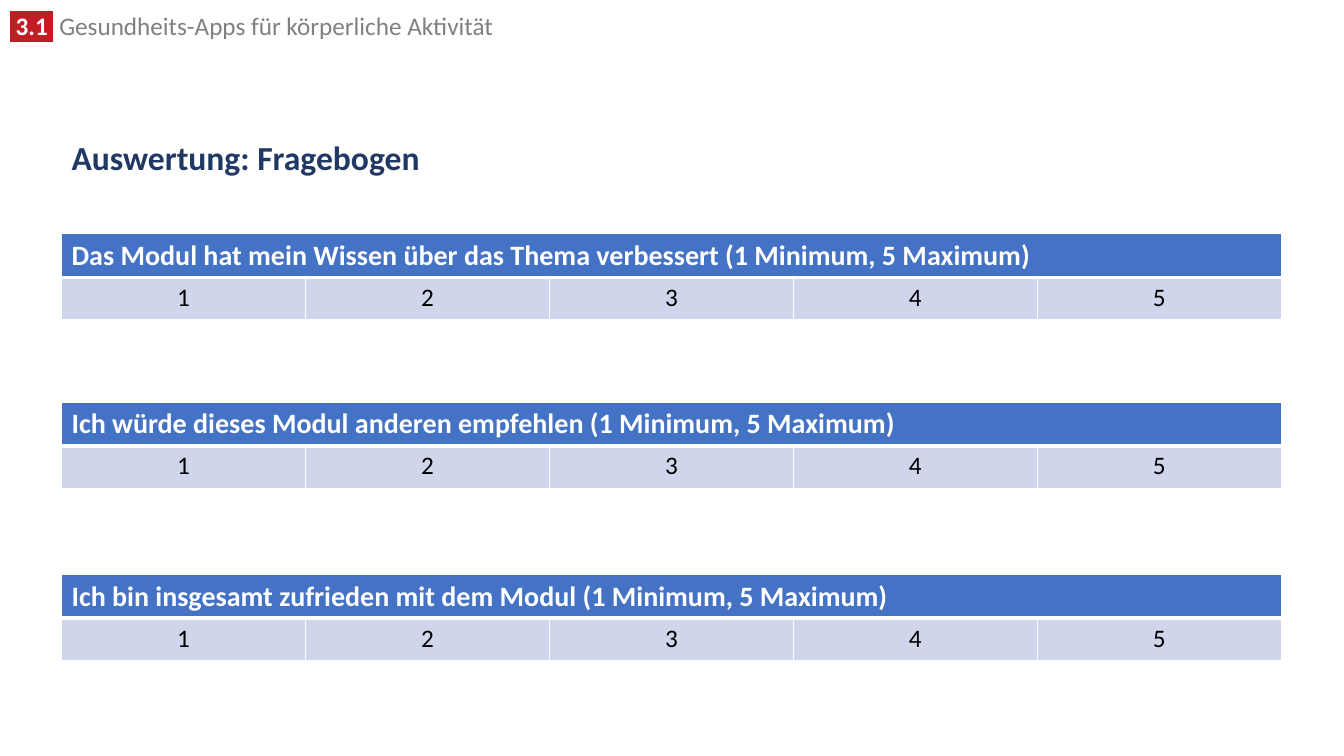
"""Build the questionnaire slide with three rating tables."""
import dataclasses

import lxml.etree
import pptx
import pptx.dml.color
import pptx.enum.text
import pptx.oxml.ns
import pptx.util

PX = 9144
LEFT, WIDE = 61, 1210
ROW = 42
SCORES = range(1, 6)
ALIGN = pptx.enum.text.PP_ALIGN
RATINGS = (
    (232, "Das Modul hat mein Wissen über das Thema verbessert (1 Minimum, 5 Maximum)"),
    (399, "Ich würde dieses Modul anderen empfehlen (1 Minimum, 5 Maximum)"),
    (570, "Ich bin insgesamt zufrieden mit dem Modul (1 Minimum, 5 Maximum)"),
)


@dataclasses.dataclass(frozen=True)
class Theme:
    """Hold the colours, font and type sizes."""
    font: str = "Calibri"
    white: str = "FFFFFF"
    black: str = "000000"
    red: str = "C01E24"
    grey: str = "808080"
    navy: str = "203864"
    blue: str = "4472C4"
    pale: str = "CFD5EA"
    title: int = 24
    query: int = 20
    small: int = 18


THEME = Theme()


def box(*sizes):
    """Turn pixel lengths into EMU."""
    return [pptx.util.Emu(size * PX) for size in sizes]


def style(font, size, color, bold=False):
    """Set face, size, colour and weight of a font."""
    font.name = THEME.font
    font.size = pptx.util.Pt(size)
    font.bold = bold
    font.color.rgb = pptx.dml.color.RGBColor.from_string(color)


def node(parent, tag, **attrs):
    """Append a DrawingML element and return it."""
    return lxml.etree.SubElement(parent, pptx.oxml.ns.qn(tag), attrs)


def mark(run, color):
    """Highlight a run."""
    light = node(run.font._element, "a:highlight")
    node(light, "a:srgbClr", val=color)
    run.font._element.find(pptx.oxml.ns.qn("a:solidFill")).addnext(light)


def add_header(slide):
    """Add the chapter number and its name."""
    frame = slide.shapes.add_textbox(*box(0, 11, 952, 35)).text_frame
    frame.word_wrap = True
    para = frame.paragraphs[0]
    para.line_spacing = 0.8
    number, name = para.add_run(), para.add_run()
    number.text = " 3.1 "
    style(number.font, THEME.small, THEME.white, True)
    mark(number, THEME.red)
    name.text = " Gesundheits-Apps für körperliche Aktivität"
    style(name.font, THEME.small, THEME.grey)


def add_title(slide, text):
    """Place and fill the title."""
    title = slide.shapes.title
    title.left, title.top, title.width, title.height = box(LEFT, 118, WIDE, 80)
    title.text_frame.text = text
    para = title.text_frame.paragraphs[0]
    para.alignment = ALIGN.LEFT
    para.line_spacing = 0.9
    style(para.font, THEME.title, THEME.navy, True)


def add_edges(cell, bottom):
    """Draw white borders around a cell."""
    props = cell._tc.get_or_add_tcPr()
    for side, width in (("L", 1), ("R", 1), ("T", 1), ("B", bottom)):
        line = node(props, f"a:ln{side}", w=str(pptx.util.Pt(width)))
        node(node(line, "a:solidFill"), "a:srgbClr", val=THEME.white)


def paint(cell, color, bottom=1):
    """Give a cell its borders and fill."""
    add_edges(cell, bottom)
    cell.fill.solid()
    cell.fill.fore_color.rgb = pptx.dml.color.RGBColor.from_string(color)


def add_rating(slide, top, query):
    """Add a question above its row of scores."""
    table = slide.shapes.add_table(
        2, len(SCORES), *box(LEFT, top, WIDE, 2 * ROW)).table
    table.horz_banding = False
    head = table.cell(0, 0)
    head.merge(table.cell(0, len(SCORES) - 1))
    for cell in table.rows[0].cells:
        paint(cell, THEME.blue, 3)
    head.text = query
    style(head.text_frame.paragraphs[0].font, THEME.query, THEME.white, True)
    for score, cell in zip(SCORES, table.rows[1].cells):
        paint(cell, THEME.pale)
        cell.text = str(score)
        para = cell.text_frame.paragraphs[0]
        para.alignment = ALIGN.CENTER
        style(para.font, THEME.small, THEME.black)


def main():
    """Build and save the slide."""
    deck = pptx.Presentation()
    deck.slide_width, deck.slide_height = box(1333, 750)
    slide = deck.slides.add_slide(deck.slide_layouts[5])
    add_header(slide)
    add_title(slide, "Auswertung: Fragebogen")
    for top, query in RATINGS:
        add_rating(slide, top, query)
    deck.save("out.pptx")


if __name__ == "__main__":
    main()
